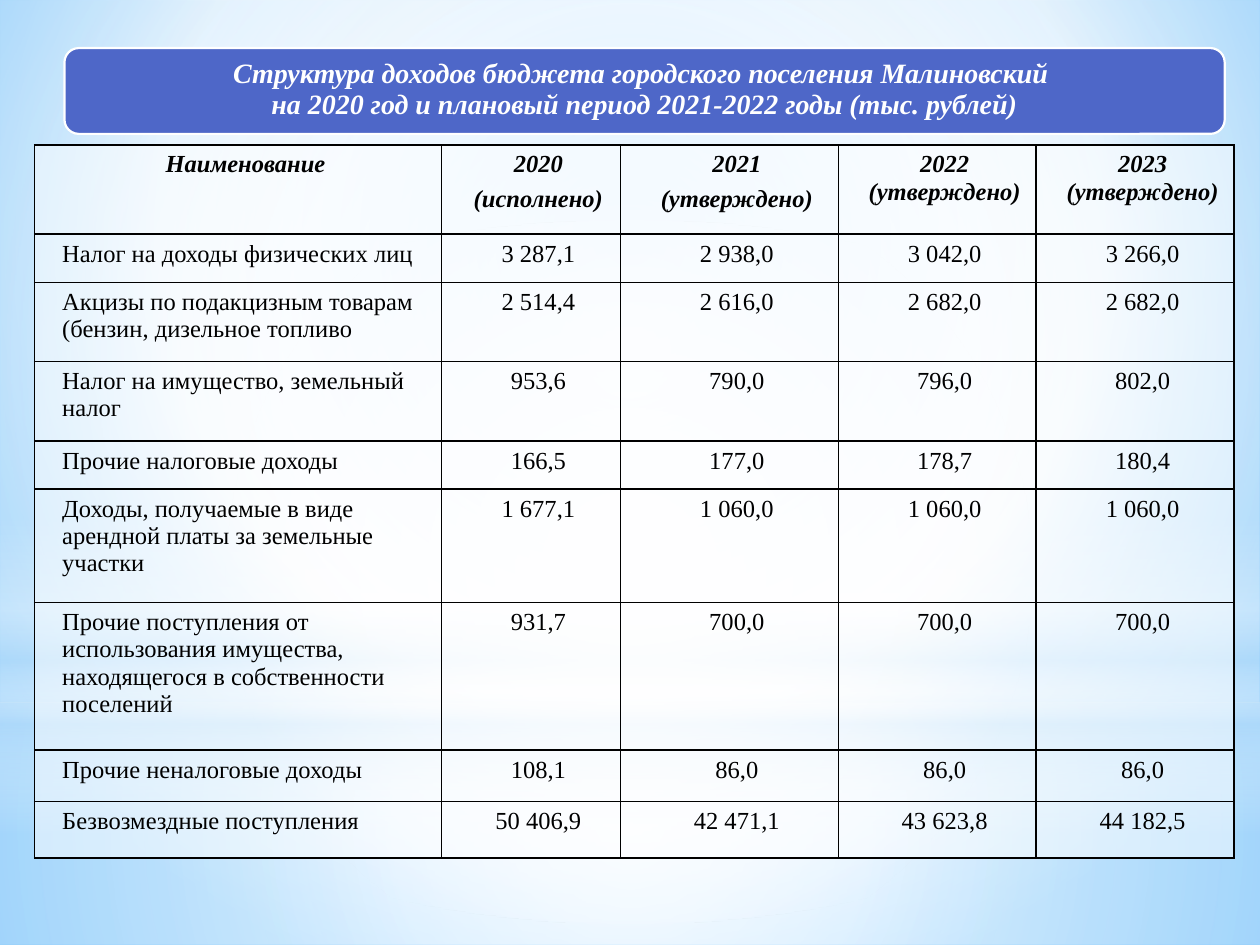
from lxml import etree
from pptx import Presentation
from pptx import util as u
from pptx.dml.color import RGBColor
from pptx.enum import shapes, text
from pptx.oxml import parse_xml
from pptx.oxml.ns import nsdecls, qn

FONT = "Times New Roman"
BLACK, WHITE, BANNER_BLUE, PALE_BLUE = "000000", "FFFFFF", "4E67C8", "B4DCFA"

COLUMN_WIDTHS = [8.2, 3.61, 4.39, 3.99, 3.99]
ROW_HEIGHTS = [1.8, 0.97, 1.6, 1.6, 0.97, 2.29, 2.97, 1.04, 1.14]
INCOME_ROWS = [
    ["Наименование", "2020\n(исполнено)", "2021\n(утверждено)",
     "2022 (утверждено)", "2023 (утверждено)"],
    ["Налог на доходы физических лиц", "3 287,1", "2 938,0", "3 042,0", "3 266,0"],
    ["Акцизы по подакцизным товарам (бензин, дизельное топливо",
     "2 514,4", "2 616,0", "2 682,0", "2 682,0"],
    ["Налог на имущество, земельный налог", "953,6", "790,0", "796,0", "802,0"],
    ["Прочие налоговые доходы", "166,5", "177,0", "178,7", "180,4"],
    ["Доходы, получаемые в виде арендной платы за земельные участки",
     "1 677,1", "1 060,0", "1 060,0", "1 060,0"],
    ["Прочие поступления от использования имущества, находящегося в собственности поселений",
     "931,7", "700,0", "700,0", "700,0"],
    ["Прочие неналоговые доходы", "108,1", "86,0", "86,0", "86,0"],
    ["Безвозмездные поступления", "50 406,9", "42 471,1", "43 623,8", "44 182,5"],
]
FIRST_TIGHT_ROW = 7  # names from this row on have no space above

# Backdrop layers: shape, position in cm, stops (position, colour, opacity), focus
CENTRE = (50, 50, 50, 50)
BACKDROP = [
    ("RECTANGLE", (0, 14.17, 25.4, 4.88),
     [(0, WHITE, 91), (37, WHITE, 76), (100, PALE_BLUE, 79)], CENTRE),
    ("RECTANGLE", (0, 0, 25.4, 14.17),
     [(0, WHITE, 89), (48, WHITE, 62), (100, PALE_BLUE, 79)], CENTRE),
    ("RECTANGLE", (0, 10.46, 25.4, 6.35),
     [(0, WHITE, 0), (29, WHITE, 30), (45, PALE_BLUE, 40),
      (55, WHITE, 26), (65, PALE_BLUE, 60), (100, WHITE, 0)], None),
    ("OVAL", (0, 4.45, 25.4, 14.17), [(0, WHITE, 100), (56, WHITE, 0)], CENTRE),
]


def color(value):
    return RGBColor.from_string(value)


def set_gradient(properties, stops, focus):
    """Replace a solid fill by a circular gradient, or a vertical one without focus."""
    stop_xml = "".join(
        f'<a:gs pos="{position * 1000}"><a:srgbClr val="{value}">'
        f'<a:alpha val="{opacity * 1000}"/></a:srgbClr></a:gs>'
        for position, value, opacity in stops)
    if focus:
        sides = " ".join(f'{side}="{share * 1000}"' for side, share in zip("ltrb", focus))
        direction = f'<a:path path="circle"><a:fillToRect {sides}/></a:path>'
    else:
        direction = '<a:lin ang="5400000" scaled="0"/>'
    gradient = parse_xml(f'<a:gradFill {nsdecls("a")} rotWithShape="1">'
                         f'<a:gsLst>{stop_xml}</a:gsLst>{direction}</a:gradFill>')
    properties.replace(properties.find(qn("a:solidFill")), gradient)


def add_filled_shape(slide, kind, box, fill=WHITE):
    shape = slide.shapes.add_shape(getattr(shapes.MSO_SHAPE, kind), *map(u.Cm, box))
    shape.shadow.inherit = False
    shape.fill.solid()
    shape.fill.fore_color.rgb = color(fill)
    shape.line.fill.background()
    return shape


def add_backdrop(slide):
    slide.background.fill.solid()
    set_gradient(slide._element.find(".//" + qn("p:bgPr")),
                 [(0, "9ED5FF", 100), (60, WHITE, 100), (100, "5BB9FF", 100)],
                 (20, 10, 20, 60))
    for kind, box, stops, focus in BACKDROP:
        shape = add_filled_shape(slide, kind, box)
        set_gradient(shape._element.spPr, stops, focus)


def format_runs(paragraph, size, value, emphasis):
    for run in paragraph.runs:
        font = run.font
        font.name, font.size = FONT, u.Pt(size)
        font.bold = font.italic = emphasis
        font.color.rgb = color(value)


def add_title(slide):
    banner = add_filled_shape(slide, "ROUNDED_RECTANGLE", (1.3, 0.97, 23.39, 1.73), BANNER_BLUE)
    banner.line.color.rgb = color(WHITE)
    banner.line.width = u.Pt(1.25)

    title = slide.shapes.title
    banner._element.addnext(title._element)  # bring the title in front of the banner
    title.left, title.top, title.width, title.height = map(u.Cm, (1.37, 1.04, 23.24, 1.55))
    frame = title.text_frame
    frame.text = ("Структура доходов бюджета городского поселения Малиновский \v"
                  "на 2020 год и плановый период 2021-2022 годы (тыс. рублей)")
    frame.word_wrap = True
    frame.auto_size = text.MSO_AUTO_SIZE.NONE
    frame.vertical_anchor = text.MSO_ANCHOR.MIDDLE
    frame.margin_left = frame.margin_right = frame.margin_top = frame.margin_bottom = u.Cm(0.18)
    paragraph = frame.paragraphs[0]
    paragraph.alignment = text.PP_ALIGN.CENTER
    paragraph.line_spacing = 0.9
    format_runs(paragraph, 16, WHITE, True)


def format_cell(cell):
    """Black borders and a half-transparent white fill."""
    cell.fill.solid()
    cell.fill.fore_color.rgb = color(WHITE)
    properties = cell._tc.get_or_add_tcPr()
    fill_color = properties.find(qn("a:solidFill")).find(qn("a:srgbClr"))
    etree.SubElement(fill_color, qn("a:alpha"), val="50000")
    for index, side in enumerate(("lnL", "lnR", "lnT", "lnB")):
        properties.insert(index, parse_xml(
            f'<a:{side} {nsdecls("a")} w="{u.Pt(1)}"><a:solidFill>'
            f'<a:srgbClr val="{BLACK}"/></a:solidFill></a:{side}>'))


def add_income_table(slide):
    table = slide.shapes.add_table(
        len(ROW_HEIGHTS), len(COLUMN_WIDTHS), u.Cm(0.7), u.Cm(2.92),
        u.Cm(sum(COLUMN_WIDTHS)), u.Cm(sum(ROW_HEIGHTS))).table
    table.first_row = table.horz_banding = False
    for column, width in zip(table.columns, COLUMN_WIDTHS):
        column.width = u.Cm(width)
    for row, height in zip(table.rows, ROW_HEIGHTS):
        row.height = u.Cm(height)

    for row_index, values in enumerate(INCOME_ROWS):
        for column_index, value in enumerate(values):
            cell = table.cell(row_index, column_index)
            cell.text_frame.text = value
            format_cell(cell)
            header, name = row_index == 0, column_index == 0
            tight = name and row_index >= FIRST_TIGHT_ROW
            for paragraph in cell.text_frame.paragraphs:
                left_aligned = name and not header
                paragraph.alignment = (text.PP_ALIGN.LEFT if left_aligned
                                       else text.PP_ALIGN.CENTER)
                paragraph.space_before = u.Pt(0 if tight else 4)
                paragraph._p.get_or_add_pPr().set("marL", str(u.Cm(0.3)))
                format_runs(paragraph, 14, BLACK, header)


def main():
    presentation = Presentation()
    presentation.slide_width, presentation.slide_height = u.Cm(25.4), u.Cm(19.05)
    slide = presentation.slides.add_slide(presentation.slide_layouts[5])  # title only
    add_backdrop(slide)
    add_title(slide)
    add_income_table(slide)
    presentation.save("out.pptx")


if __name__ == "__main__":
    main()
